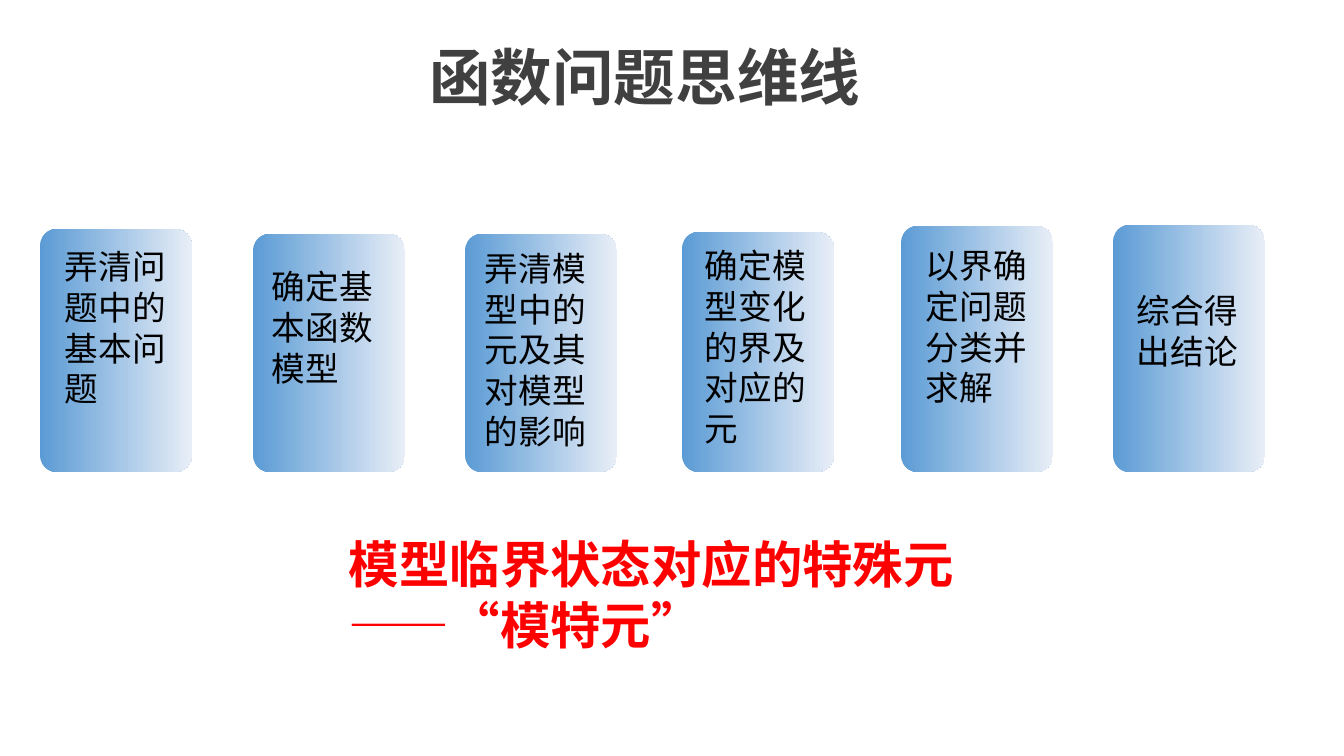
from dataclasses import dataclass

from lxml.etree import SubElement
from pptx import Presentation
from pptx.dml.color import RGBColor
from pptx.enum.shapes import MSO_SHAPE as Shape
from pptx.enum.text import MSO_ANCHOR as Anchor, PP_ALIGN as Align
from pptx.oxml.ns import qn
from pptx.slide import Slide
from pptx.text.text import TextFrame
from pptx.util import Emu, Length, Pt

COLOURS = {
    "title": "404040",
    "text": "000000",
    "accent": "FF0000",
    "card_start": "5B9BD5",
    "card_end": "E8EEF7",
}
CJK_FONT = "Noto Sans CJK SC"
CARD_WIDTH, CARD_BOTTOM, LABEL_WIDTH = 152, 472, 150


@dataclass(frozen=True)
class Step:
    text: str
    left: int
    top: int
    label_left: int
    label_top: int
    label_height: int


STEPS = [
    Step("弄清问题中的基本问题", 40, 229, 55, 241, 172),
    Step("确定基本函数模型", 253, 234, 262, 261, 132),
    Step("弄清模型中的元及其对模型的影响", 465, 234, 475, 243, 214),
    Step("确定模型变化的界及对应的元", 682, 232, 695, 240, 214),
    Step("以界确定问题分类并求解", 901, 226, 916, 240, 172),
    Step("综合得出结论", 1113, 225, 1127, 285, 92),
]


def px(value: int) -> Length:
    return Emu(round(value * 914400 / 100.8))


def colour(name: str) -> RGBColor:
    return RGBColor.from_string(COLOURS[name])


def write(frame: TextFrame, *lines: str, size: int, ink: str = "text",
          font: str = "Arial", bold: bool = False,
          align: Align = Align.LEFT, spacing: float | Length = 1.0) -> None:
    frame.word_wrap = True
    frame.vertical_anchor = Anchor.TOP
    for index, line in enumerate(lines):
        para = frame.add_paragraph() if index else frame.paragraphs[0]
        para.alignment = align
        para.line_spacing = spacing
        span = para.add_run()
        span.text = line
        span.font.size = Pt(size)
        span.font.bold = bold
        span.font.name = font
        span.font.color.rgb = colour(ink)
        SubElement(span.font._element, qn("a:ea")).set("typeface", CJK_FONT)


def add_label(page: Slide, left: int, top: int, width: int, height: int) -> TextFrame:
    return page.shapes.add_textbox(px(left), px(top), px(width), px(height)).text_frame


def draw_step(page: Slide, step: Step) -> None:
    card = page.shapes.add_shape(
        Shape.ROUNDED_RECTANGLE, px(step.left), px(step.top),
        px(CARD_WIDTH), px(CARD_BOTTOM - step.top))
    card.adjustments[0] = 0.11
    card.shadow.inherit = False
    card.line.fill.background()
    card.fill.gradient()
    card.fill.gradient_angle = 0
    for stop, position, name in zip(card.fill.gradient_stops, (0, 1),
                                    ("card_start", "card_end")):
        stop.position = position
        stop.color.rgb = colour(name)
    label = add_label(page, step.label_left, step.label_top,
                      LABEL_WIDTH, step.label_height)
    write(label, step.text, size=24, spacing=Pt(29))


def main() -> None:
    deck = Presentation()
    deck.slide_width, deck.slide_height = px(1344), px(756)
    page = deck.slides.add_slide(deck.slide_layouts[5])

    # Title
    title = page.shapes.title
    title.left, title.top, title.width, title.height = map(px, (40, 42, 1210, 126))
    write(title.text_frame, "函数问题思维线", size=44, ink="title",
          font=CJK_FONT, bold=True, align=Align.CENTER, spacing=0.9)

    # Steps of the line of thought
    for step in STEPS:
        draw_step(page, step)

    # Key idea
    write(add_label(page, 339, 528, 667, 162),
          "模型临界状态对应的特殊元", "——“模特元”",
          size=36, ink="accent", bold=True, spacing=Pt(43.5))

    deck.save("out.pptx")


if __name__ == "__main__":
    main()
